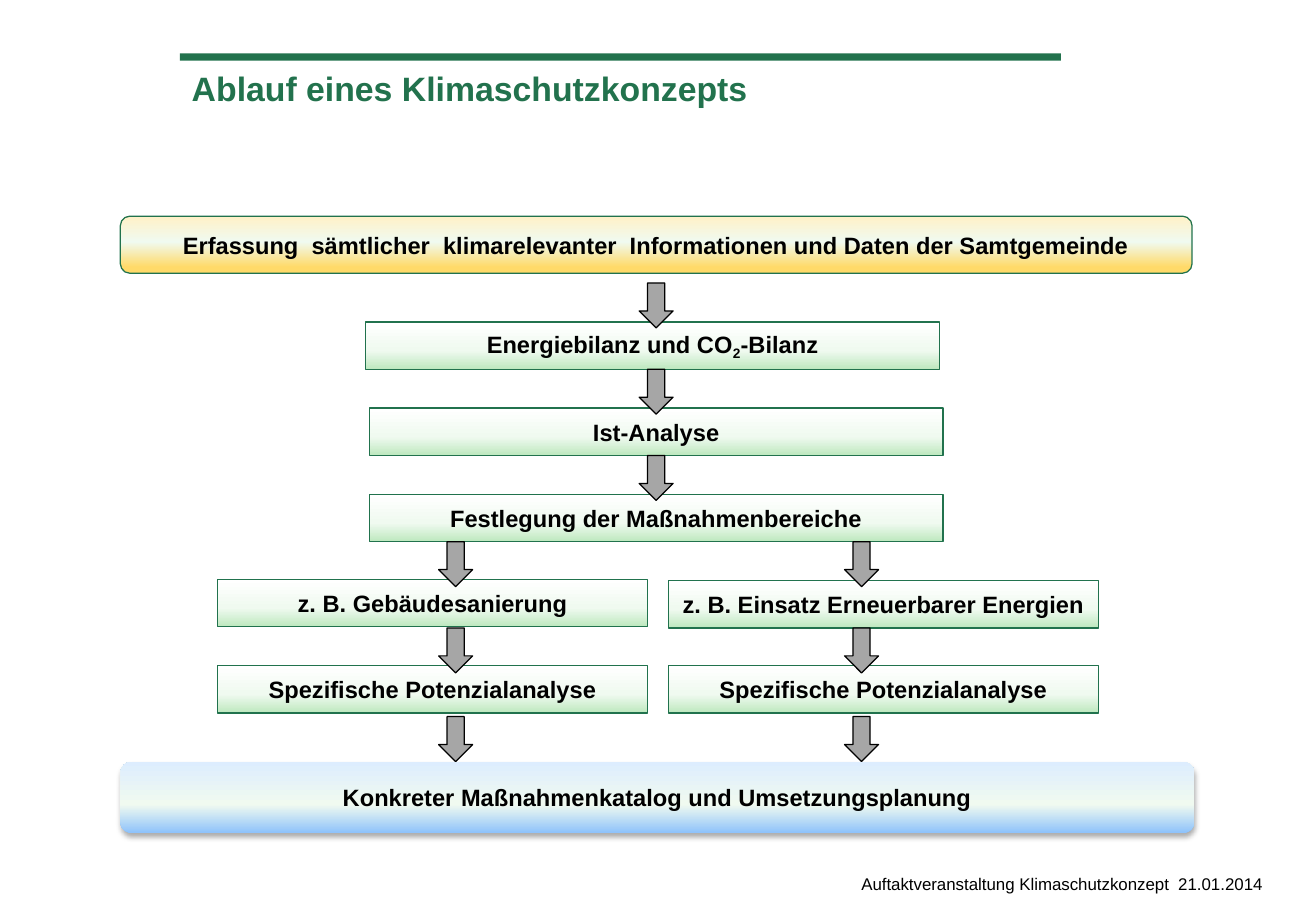
from dataclasses import dataclass

from lxml import etree
from pptx import Presentation
from pptx.dml.color import RGBColor as RGB
from pptx.enum.shapes import MSO_SHAPE as Shape
from pptx.enum.text import MSO_ANCHOR as Anchor, PP_ALIGN as Align
from pptx.oxml.ns import qn
from pptx.util import Inches, Pt


@dataclass(frozen=True)
class Theme:
    font: str = "Arial"
    green: str = "22724D"
    outline: str = "21724D"
    arrow: str = "A6A6A6"
    black: str = "000000"
    # Gradient stops run from bottom to top
    yellow_fill: tuple = ((11, "FFDA69"), (55, "F0FAF0"), (100, "FFF1C7"))
    green_fill: tuple = ((0, "BEE8BF"), (40, "F0FAF0"), (100, "FFFFFF"))
    blue_fill: tuple = ((0, "8DC2FB"), (40, "F0FAF0"), (100, "DDEDFE"))
    title_size: int = 20
    step_size: int = 14
    footer_size: int = 10
    line_width: float = 0.75


class FlowSlide:
    def __init__(self, slide, theme):
        self.slide = slide
        self.theme = theme

    def shape(self, kind, left, top, width, height, line=None):
        shape = self.slide.shapes.add_shape(
            kind, Inches(left), Inches(top), Inches(width), Inches(height))
        shape.shadow.inherit = False
        if line:
            shape.line.color.rgb = RGB.from_string(line)
            shape.line.width = Pt(self.theme.line_width)
        else:
            shape.line.fill.background()
        return shape

    def solid(self, kind, left, top, width, height, color, line=None):
        shape = self.shape(kind, left, top, width, height, line)
        shape.fill.solid()
        shape.fill.fore_color.rgb = RGB.from_string(color)

    def arrow(self, center, top):
        self.solid(Shape.DOWN_ARROW, center - 0.14, top, 0.28, 0.37,
                   self.theme.arrow, self.theme.black)

    def style(self, paragraph, size, color, bold=False):
        for run in paragraph.runs:
            run.font.name = self.theme.font
            run.font.size = Pt(size)
            run.font.bold = bold
            run.font.color.rgb = RGB.from_string(color)

    def label(self, text, left, top, width, height, size, color, bold=False):
        box = self.slide.shapes.add_textbox(
            Inches(left), Inches(top), Inches(width), Inches(height))
        box.text_frame.word_wrap = True
        box.text_frame.text = text
        self.style(box.text_frame.paragraphs[0], size, color, bold)

    def step(self, parts, left, top, width, height, stops,
             kind=Shape.RECTANGLE, line=None):
        """Add a gradient box; every second text part is a subscript."""
        shape = self.shape(kind, left, top, width, height, line)
        self.gradient(shape, stops)
        frame = shape.text_frame
        frame.word_wrap = True
        frame.vertical_anchor = Anchor.MIDDLE
        paragraph = frame.paragraphs[0]
        paragraph.alignment = Align.CENTER
        for part in parts:
            paragraph.add_run().text = part
        self.style(paragraph, self.theme.step_size, self.theme.black, True)
        for subscript in paragraph.runs[1::2]:
            subscript.font._element.set("baseline", "-25000")
        return shape

    def gradient(self, shape, stops):
        shape.fill.gradient()
        shape.fill.gradient_angle = 90
        stop_list = shape.element.spPr.find(qn("a:gradFill")).find(qn("a:gsLst"))
        for old_stop in list(stop_list):
            stop_list.remove(old_stop)
        for position, color in stops:
            stop = etree.SubElement(stop_list, qn("a:gs"), pos=str(position * 1000))
            etree.SubElement(stop, qn("a:srgbClr"), val=color)

    def drop_shadow(self, shape):
        effects = shape.element.spPr.find(qn("a:effectLst"))
        shadow = etree.SubElement(
            effects, qn("a:outerShdw"), blurRad=str(Pt(3.5)), dist=str(Pt(2.2)),
            dir="5400000", algn="t", rotWithShape="0")
        color = etree.SubElement(shadow, qn("a:srgbClr"), val=self.theme.black)
        etree.SubElement(color, qn("a:alpha"), val="32000")


def main():
    theme = Theme()
    deck = Presentation()
    deck.slide_width, deck.slide_height = Inches(10.83), Inches(7.5)
    flow = FlowSlide(deck.slides.add_slide(deck.slide_layouts[6]), theme)

    # Header and footer
    flow.solid(Shape.RECTANGLE, 1.48, 0.44, 7.25, 0.06, theme.green)
    flow.label("Ablauf eines Klimaschutzkonzepts", 1.48, 0.51, 7.16, 0.93,
               theme.title_size, theme.green, True)
    flow.label("Auftaktveranstaltung Klimaschutzkonzept  21.01.2014",
               6.99, 7.14, 3.84, 0.31, theme.footer_size, theme.black)

    # Start and result of the process
    flow.step(["Erfassung  sämtlicher  klimarelevanter  Informationen und Daten"
               " der Samtgemeinde"], 0.99, 1.78, 8.82, 0.47, theme.yellow_fill,
              Shape.ROUNDED_RECTANGLE, theme.outline)
    catalogue = flow.step(
        ["Konkreter Maßnahmenkatalog und Umsetzungsplanung"],
        0.99, 6.27, 8.84, 0.59, theme.blue_fill, Shape.ROUNDED_RECTANGLE)
    flow.drop_shadow(catalogue)

    # Shared steps, then the two parallel branches
    shared_width, branch_width = 4.72, 3.54
    left_branch, right_branch = 1.79, 5.5
    steps = [
        (["Energiebilanz und CO", "2", "-Bilanz"], 3.01, 2.65, shared_width),
        (["Ist-Analyse"], 3.04, 3.36, shared_width),
        (["Festlegung der Maßnahmenbereiche"], 3.04, 4.07, shared_width),
        (["z. B. Gebäudesanierung"], left_branch, 4.77, branch_width),
        (["z. B. Einsatz Erneuerbarer Energien"], right_branch, 4.78, branch_width),
        (["Spezifische Potenzialanalyse"], left_branch, 5.48, branch_width),
        (["Spezifische Potenzialanalyse"], right_branch, 5.48, branch_width),
    ]
    for parts, left, top, width in steps:
        flow.step(parts, left, top, width, 0.39, theme.green_fill,
                  line=theme.outline)

    # Arrows between the steps
    for top in (2.33, 3.04, 3.75):
        flow.arrow(5.4, top)
    for top in (4.46, 5.17, 5.9):
        for center in (3.75, 7.09):
            flow.arrow(center, top)

    deck.save("out.pptx")


if __name__ == "__main__":
    main()
